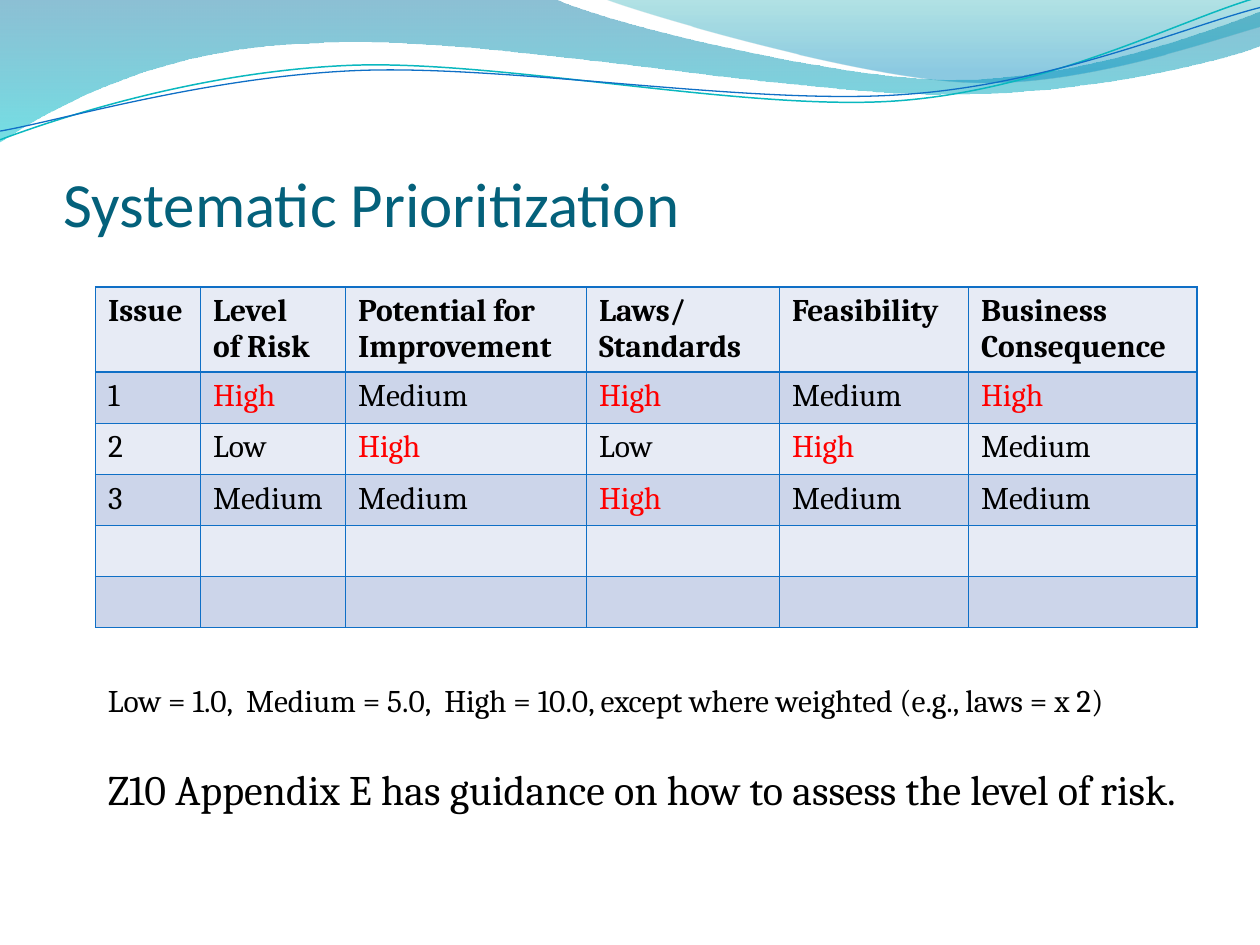
from lxml.etree import SubElement
from pptx import Presentation
from pptx.dml.color import RGBColor
from pptx.enum.text import MSO_ANCHOR
from pptx.oxml import parse_xml
from pptx.oxml.ns import nsdecls, qn
from pptx.util import Pt

BLACK = RGBColor(0x00, 0x00, 0x00)
RED = RGBColor(0xFF, 0x00, 0x00)
BLUE = RGBColor(0x0F, 0x6F, 0xC6)
TEAL = RGBColor(0x0A, 0xB8, 0xBF)
INK = RGBColor(0x04, 0x61, 0x7B)
PALE = RGBColor(0xE7, 0xEB, 0xF5)
MIST = RGBColor(0xCC, 0xD5, 0xEA)
SEA = RGBColor(0x00, 0x74, 0xA1)
AQUA = RGBColor(0x00, 0xC6, 0xCF)
JADE = RGBColor(0x00, 0xA1, 0xA9)
SKY = RGBColor(0x00, 0x8B, 0xBF)

deck = Presentation()
deck.slide_width, deck.slide_height = Pt(720), Pt(540)
slide = deck.slides.add_slide(deck.slide_layouts[6])
shapes = slide.shapes


def draw(start, parts, close):
    """Outline in points: a part of one point is a line, of three a Bézier curve."""
    pen = shapes.build_freeform(Pt(start[0]), Pt(start[1]), scale=1.0)
    pen.add_line_segments([(Pt(x), Pt(y)) for part in parts for x, y in part],
                          close=close)
    shape = pen.convert_to_shape()
    shape.shadow.inherit = False
    nodes = iter(list(shape._element.iter(qn("a:lnTo"))))
    for part in parts:
        curve = next(nodes)
        if len(part) == 3:
            curve.tag = qn("a:cubicBezTo")
            for node in (next(nodes), next(nodes)):
                node.getparent().remove(node)
                curve.append(node[0])
    return shape


def style(run, **looks):
    for name, value in looks.items():
        if name == "color":
            run.font.color.rgb = value
        else:
            setattr(run.font, name, value)


# Filled waves: start, outline, (position, colour, opacity %) stops
waves = [
    ((0, 0),
     [[(316.8, -0.7)],
      [(342.7, 12.2), (478.1, 45.4), (545.8, 45.4)],
      [(614.2, 45.4), (689.8, 18.7), (720, 6.5)],
      [(720.7, 25.9)],
      [(707.8, 31.7), (626.4, 54.7), (537.1, 54)],
      [(447.8, 54), (275, 20.2), (185, 24.5)],
      [(92.9, 25.9), (33.1, 59.8), (-0.7, 81.4)]],
     [(0, SEA, 45), (1, AQUA, 55)]),
    ((344.9, -0.7),
     [[(366.5, 7.9), (491, 44.6), (553.7, 46.8)],
      [(616.3, 49.7), (691.9, 23), (720, 15.1)],
      [(720, 0)]],
     [(0, JADE, 30), (0.8, SKY, 45)]),
]
for start, parts, stops in waves:
    wave = draw(start, parts, True)
    wave.line.fill.background()
    wave.fill.gradient()
    wave.fill.gradient_angle = 270
    for stop, (place, color, alpha) in zip(wave.fill.gradient_stops, stops):
        stop.position = place
        stop.color.rgb = color
    tones = wave.fill._xPr.iter(qn("a:srgbClr"))
    for tone, (place, color, alpha) in zip(tones, stops):
        SubElement(tone, qn("a:alpha")).set("val", str(alpha * 1000))

# Thin wave lines
lines = [
    ((0, 79.9),
     [[(34.6, 67), (113.8, 41), (199.4, 37.4)],
      [(284.4, 33.8), (427, 64.1), (513.4, 57.6)],
      [(599.8, 51.1), (675.4, 10.8), (718.6, -1.4)]], TEAL, 0.85),
    ((0, 74.9),
     [[(33.8, 69.1), (118.1, 43.9), (203.8, 40.3)],
      [(290.2, 36.7), (429.8, 60.5), (516.2, 54)],
      [(601.9, 48.2), (677.5, 15.1), (720, 4.3)]], BLUE, 0.75),
]
for start, parts, color, width in lines:
    curve = draw(start, parts, False)
    curve.fill.background()
    curve.line.color.rgb = color
    curve.line.width = Pt(width)

# Priority table; the header row grows to fit its two lines
rows = [
    ["Issue", "Level of Risk", "Potential for Improvement", "Laws/ Standards",
     "Feasibility", "Business Consequence"],
    ["1", "High", "Medium", "High", "Medium", "High"],
    ["2", "Low", "High", "Low", "High", "Medium"],
    ["3", "Medium", "Medium", "High", "Medium", "Medium"],
    [""] * 6,
    [""] * 6,
]
widths = [60, 82.9, 137.7, 110.3, 108, 130.6]
holder = shapes.add_table(len(rows), len(widths), Pt(54.6), Pt(163.9),
                          Pt(sum(widths)), Pt(196.6))
table = holder.table
for column, width in zip(table.columns, widths):
    column.width = Pt(width)
for i, row in enumerate(rows):
    table.rows[i].height = Pt(29.2)
    for j, text in enumerate(row):
        cell = table.cell(i, j)
        props = cell._tc.get_or_add_tcPr()
        for side in "LRTB":
            props.append(parse_xml(
                f'<a:ln{side} {nsdecls("a")} w="12700"><a:solidFill>'
                f'<a:srgbClr val="{BLUE}"/></a:solidFill></a:ln{side}>'))
        cell.fill.solid()
        cell.fill.fore_color.rgb = MIST if i % 2 else PALE
        cell.text = text
        for run in cell.text_frame.paragraphs[0].runs:
            style(run, name="Cambria", size=Pt(18), bold=i == 0,
                  color=RED if text == "High" else BLACK)
table.cell(0, 1).margin_right = Pt(17)
holder.height = Pt(196.6)

# Title and notes below the table
texts = [
    ("Systematic Prioritization", (36.2, 47.2, 648, 90), "Calibri", 36, INK),
    ("Z10 Appendix E has guidance on how to assess the level of risk.",
     (54.6, 432.7, 629.3, 65.5), "Cambria", 24, BLACK),
    ("Low = 1.0,  Medium = 5.0,  High = 10.0, except where weighted (e.g., laws = x 2)",
     (54.6, 385.6, 629.3, 29), "Cambria", 18, BLACK),
]
for text, box, font, size, color in texts:
    frame = shapes.add_textbox(*map(Pt, box)).text_frame
    frame.word_wrap = True
    if color == INK:
        frame.vertical_anchor = MSO_ANCHOR.BOTTOM
        frame.margin_left = frame.margin_right = frame.margin_bottom = 0
    run = frame.paragraphs[0].add_run()
    run.text = text
    style(run, name=font, size=Pt(size), color=color)

deck.save("out.pptx")
